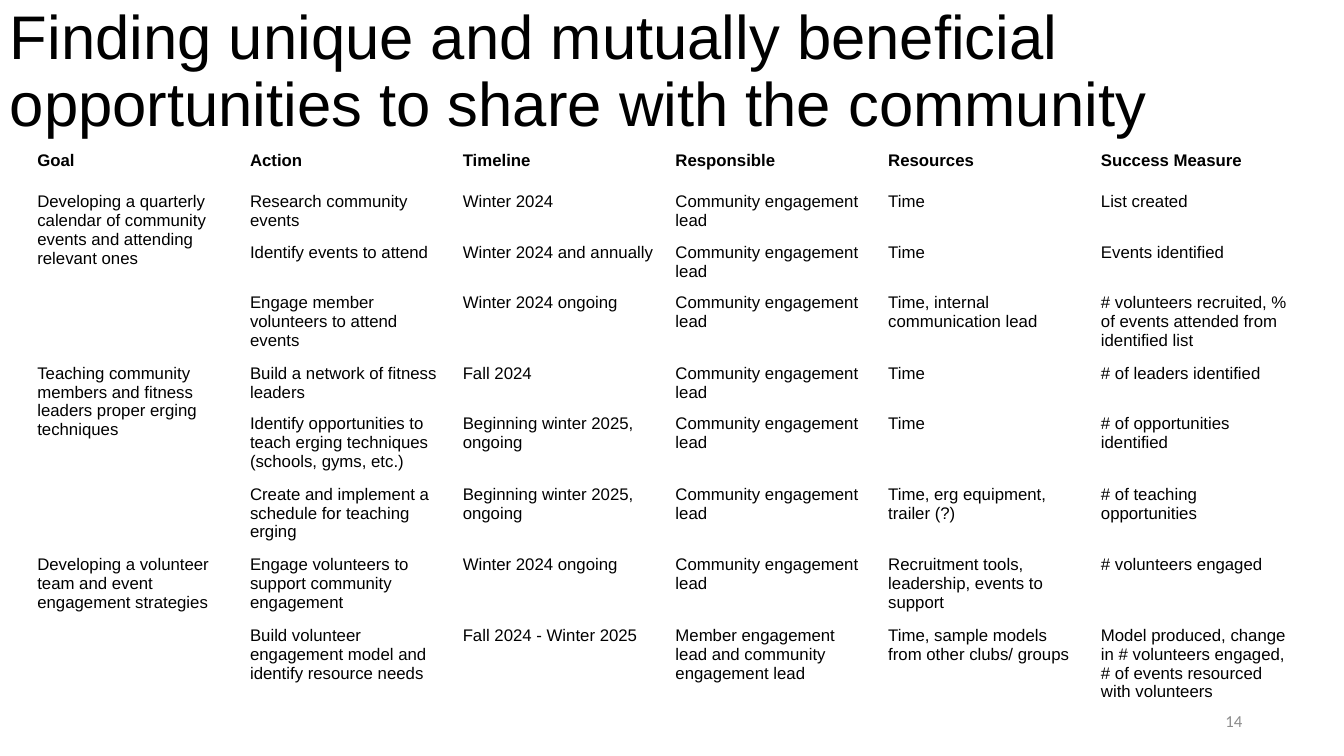
from dataclasses import dataclass

from pptx import Presentation
from pptx.dml.color import RGBColor
from pptx.enum.text import MSO_ANCHOR, PP_ALIGN
from pptx.slide import Slide
from pptx.text.text import TextFrame
from pptx.util import Emu, Pt

BLACK = RGBColor(0x00, 0x00, 0x00)
GRAY = RGBColor(0x8C, 0x8C, 0x8C)
WHITE = RGBColor(0xFF, 0xFF, 0xFF)
EMU_PER_PX = 9144
COL_W = 211
ROW_H = 41
LEAD = "Community engagement lead"
HEADERS = ("Goal", "Action", "Timeline", "Responsible", "Resources", "Success Measure")


@dataclass(frozen=True)
class Step:
    action: str
    timeline: str
    resources: str
    measure: str
    responsible: str = LEAD
    goal: str = ""
    goal_rows: int = 1

    def cells(self) -> tuple[str, ...]:
        return (self.goal, self.action, self.timeline,
                self.responsible, self.resources, self.measure)


STEPS = (
    Step("Research community events", "Winter 2024", "Time", "List created",
         goal="Developing a quarterly calendar of community events and attending relevant ones",
         goal_rows=3),
    Step("Identify events to attend", "Winter 2024 and annually", "Time", "Events identified"),
    Step("Engage member volunteers to attend events", "Winter 2024 ongoing",
         "Time, internal communication lead",
         "# volunteers recruited, % of events attended from identified list"),
    Step("Build a network of fitness leaders", "Fall 2024", "Time", "# of leaders identified",
         goal="Teaching community members and fitness leaders proper erging techniques",
         goal_rows=2),
    Step("Identify opportunities to teach erging techniques (schools, gyms, etc.)",
         "Beginning winter 2025, ongoing", "Time", "# of opportunities identified"),
    Step("Create and implement a schedule for teaching erging",
         "Beginning winter 2025, ongoing", "Time, erg equipment, trailer (?)",
         "# of teaching opportunities"),
    Step("Engage volunteers to support community engagement", "Winter 2024 ongoing",
         "Recruitment tools, leadership, events to support", "# volunteers engaged",
         goal="Developing a volunteer team and event engagement strategies"),
    Step("Build volunteer engagement model and identify resource needs",
         "Fall 2024 - Winter 2025", "Time, sample models from other clubs/ groups",
         "Model produced, change in # volunteers engaged, # of events resourced with volunteers",
         responsible="Member engagement lead and community engagement lead"),
)


def px(n: int) -> Emu:
    return Emu(n * EMU_PER_PX)


def write(tf: TextFrame, text: str, *, size: int = 12, font: str = "Arial",
          color: RGBColor = BLACK, bold: bool = False,
          align: PP_ALIGN = PP_ALIGN.LEFT, spacing: float = 1.0) -> None:
    p = tf.paragraphs[0]
    p.alignment = align
    p.line_spacing = spacing
    p.font.size = Pt(size)
    r = p.add_run()
    r.text = text
    r.font.size = Pt(size)
    r.font.name = font
    r.font.bold = bold
    r.font.color.rgb = color


def add_box(s: Slide, x: int, y: int, w: int, h: int) -> TextFrame:
    tf = s.shapes.add_textbox(px(x), px(y), px(w), px(h)).text_frame
    tf.word_wrap = True
    tf.vertical_anchor = MSO_ANCHOR.MIDDLE
    return tf


def add_plan(s: Slide, x: int, y: int) -> None:
    rows = [HEADERS] + [step.cells() for step in STEPS]
    n_rows, n_cols = len(rows), len(HEADERS)
    table = s.shapes.add_table(n_rows, n_cols, px(x), px(y),
                               px(COL_W * n_cols), px(ROW_H * n_rows)).table
    table.horz_banding = False
    for col in table.columns:
        col.width = px(COL_W)
    for i, texts in enumerate(rows):
        table.rows[i].height = px(ROW_H)
        for j, text in enumerate(texts):
            cell = table.cell(i, j)
            cell.fill.background()
            write(cell.text_frame, text, bold=i == 0)
    for i, step in enumerate(STEPS, start=1):
        if step.goal_rows > 1:
            table.cell(i, 0).merge(table.cell(i + step.goal_rows - 1, 0))


def main() -> None:
    prs = Presentation()
    prs.slide_width, prs.slide_height = px(1333), px(750)
    s = prs.slides.add_slide(prs.slide_layouts[6])
    s.background.fill.solid()
    s.background.fill.fore_color.rgb = WHITE
    write(add_box(s, 0, 0, 1333, 145),
          "Finding unique and mutually beneficial opportunities to share with the community",
          size=44, spacing=0.9)
    add_plan(s, 27, 145)
    write(add_box(s, 942, 695, 300, 40), "14",
          font="Calibri", color=GRAY, align=PP_ALIGN.RIGHT)
    prs.save("out.pptx")


if __name__ == "__main__":
    main()
